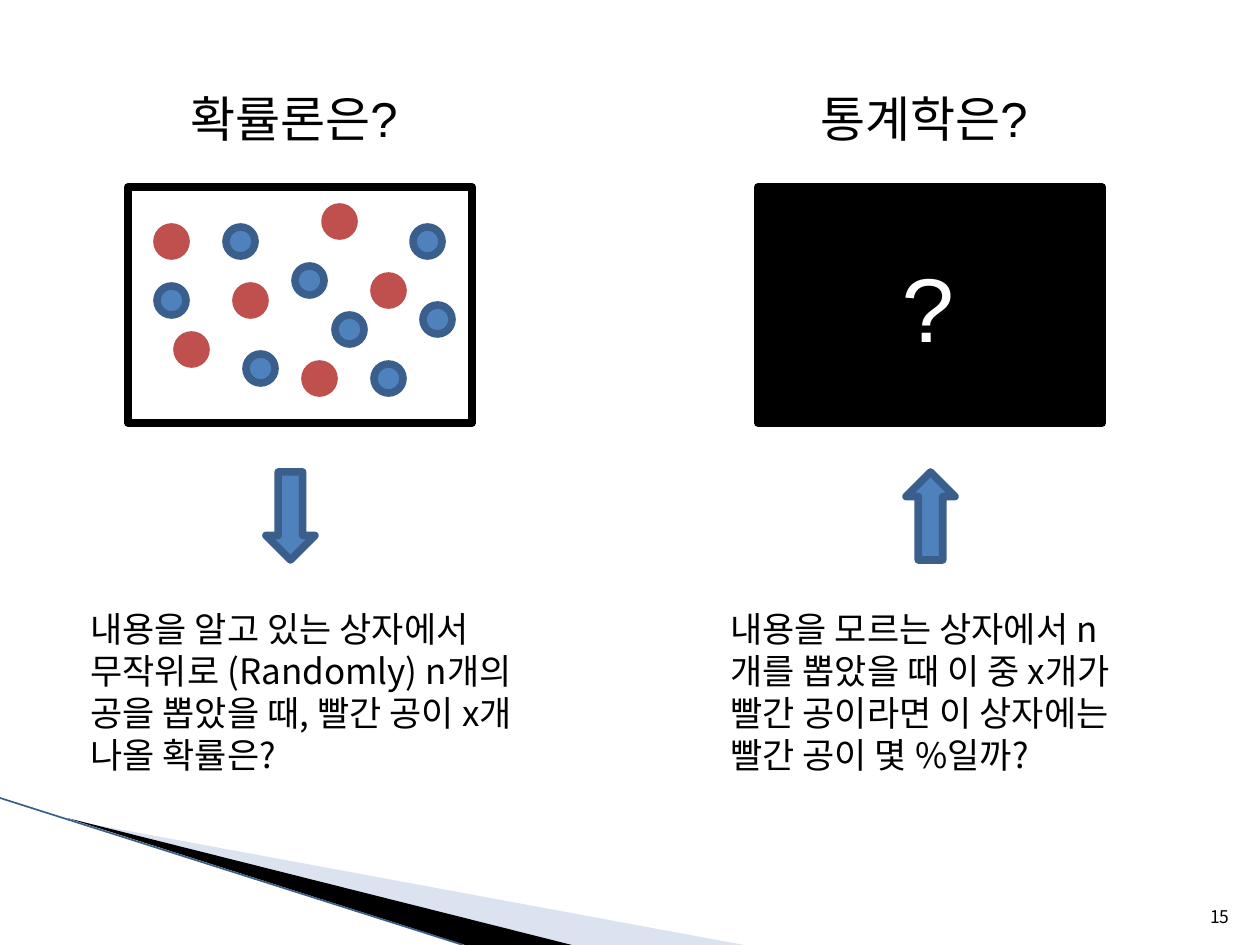
import pptx
import pptx.util
import pptx.dml.color
import pptx.enum.shapes
import pptx.enum.text
import pptx.oxml
import pptx.oxml.ns

PX = 914400 / 126
COLORS = {
    "black": "000000",
    "white": "FFFFFF",
    "red": "C0504D",
    "blue": "4F81BD",
    "navy": "3A5F8C",
    "pale": "A7B9DB",
}
KOREAN_FONT = "Noto Sans CJK KR"
SHAPES = pptx.enum.shapes.MSO_SHAPE
ALIGN = pptx.enum.text.PP_ALIGN
ANCHOR = pptx.enum.text.MSO_ANCHOR
BALL_SIZE = 29
RED_BALLS = [(29, 40), (197, 20), (49, 148), (108, 99), (177, 177), (246, 89)]
BLUE_BALLS = [(98, 40), (29, 99), (118, 167), (207, 128),
              (285, 40), (246, 177), (295, 118), (167, 79)]


def px(*lengths):
    return [pptx.util.Emu(round(length * PX)) for length in lengths]


def rgb(name):
    return pptx.dml.color.RGBColor.from_string(COLORS[name])


def write_text(shape, text, size, font, color="black", align=ALIGN.LEFT, spacing=None):
    frame = shape.text_frame
    frame.word_wrap = True
    frame.text = text
    paragraph = frame.paragraphs[0]
    paragraph.alignment = align
    if spacing:
        paragraph.line_spacing = pptx.util.Pt(spacing)
    run = paragraph.runs[0]
    run.font.size = pptx.util.Pt(size)
    run.font.name = font
    run.font.color.rgb = rgb(color)
    east_asian = pptx.oxml.parse_xml(
        f'<a:ea {pptx.oxml.ns.nsdecls("a")} typeface="{KOREAN_FONT}"/>')
    run.font.fill
    run.font._element.find(pptx.oxml.ns.qn("a:latin")).addnext(east_asian)


def add_text(slide, box, *args, anchor=ANCHOR.TOP, **options):
    shape = slide.shapes.add_textbox(*px(*box))
    write_text(shape, *args, **options)
    shape.text_frame.vertical_anchor = anchor


def add_outlined(slide, kind, box, fill, line):
    shape = slide.shapes.add_shape(kind, *px(*box))
    shape.shadow.inherit = False
    shape.fill.solid()
    shape.fill.fore_color.rgb = rgb(fill)
    shape.line.color.rgb = rgb(line)
    shape.line.width = pptx.util.Pt(4.33)
    return shape


def add_wedge(slide, points, color, opacity=100):
    builder = slide.shapes.build_freeform(*points[0], scale=PX)
    builder.add_line_segments(points[1:], close=True)
    shape = builder.convert_to_shape()
    shape.shadow.inherit = False
    shape.fill.solid()
    shape.fill.fore_color.rgb = rgb(color)
    shape.line.fill.background()
    if opacity < 100:
        alpha = pptx.oxml.parse_xml(
            f'<a:alpha {pptx.oxml.ns.nsdecls("a")} val="{opacity * 1000}"/>')
        shape._element.spPr.find(".//" + pptx.oxml.ns.qn("a:srgbClr")).append(alpha)


def add_corner(slide, left, top):
    def place(points):
        return [(left + x, top + y) for x, y in points]

    add_wedge(slide, place([(69, 22), (744, 147), (573, 147)]), "pale", 40)
    add_wedge(slide, place([(67, 20), (572, 147), (465, 147)]), "black")
    edge = slide.shapes.add_connector(
        pptx.enum.shapes.MSO_CONNECTOR.STRAIGHT,
        *px(left, top, left + 463, top + 147))
    edge.line.color.rgb = rgb("navy")
    edge.line.width = pptx.util.Pt(0.95)
    edge._element.spPr.append(
        pptx.oxml.parse_xml(f'<a:effectLst {pptx.oxml.ns.nsdecls("a")}/>'))


def add_panel(slide, left, top, title, fill, arrow_x, rotation, body_x, body_width, body):
    add_text(slide, (left + 100, top, 256, 72), title, 28, "Arial", spacing=36)
    box = add_outlined(slide, SHAPES.RECTANGLE,
                       (left + 50, top + 109, 344, 236), fill, "black")
    arrow = add_outlined(slide, SHAPES.DOWN_ARROW,
                         (left + arrow_x, top + 394, 49, 88), "blue", "navy")
    arrow.rotation = rotation
    add_text(slide, (left + body_x, top + 523, body_width, 183),
             body, 20, KOREAN_FONT, spacing=24)
    return box


def add_balls(slide, left, top):
    for balls, fill, line in ((RED_BALLS, "red", "red"), (BLUE_BALLS, "blue", "navy")):
        for x, y in balls:
            add_outlined(slide, SHAPES.OVAL,
                         (left + x, top + y, BALL_SIZE, BALL_SIZE), fill, line)


def main():
    presentation = pptx.Presentation()
    presentation.slide_width, presentation.slide_height = px(1260, 945)
    slide = presentation.slides.add_slide(presentation.slide_layouts[6])

    add_corner(slide, 0, 798)
    add_panel(slide, 78, 78, "확률론은?", "white", 188, 0, 0, 462,
              "내용을 알고 있는 상자에서 무작위로 (Randomly) n개의 공을 뽑았을 때, "
              "빨간 공이 x개 나올 확률은?")
    add_balls(slide, 128, 187)
    unknown_box = add_panel(slide, 708, 78, "통계학은?", "black", 198, 180, 10, 452,
                            "내용을 모르는 상자에서 n개를 뽑았을 때 이 중 x개가 "
                            "빨간 공이라면 이 상자에는 빨간 공이 몇 %일까?")
    write_text(unknown_box, "?", 54, "Courier New", "white", ALIGN.CENTER)
    unknown_box.text_frame.vertical_anchor = ANCHOR.MIDDLE
    add_text(slide, (1192, 883, 50, 50), "15", 10, KOREAN_FONT,
             align=ALIGN.RIGHT, anchor=ANCHOR.BOTTOM)

    presentation.save("out.pptx")


if __name__ == "__main__":
    main()
